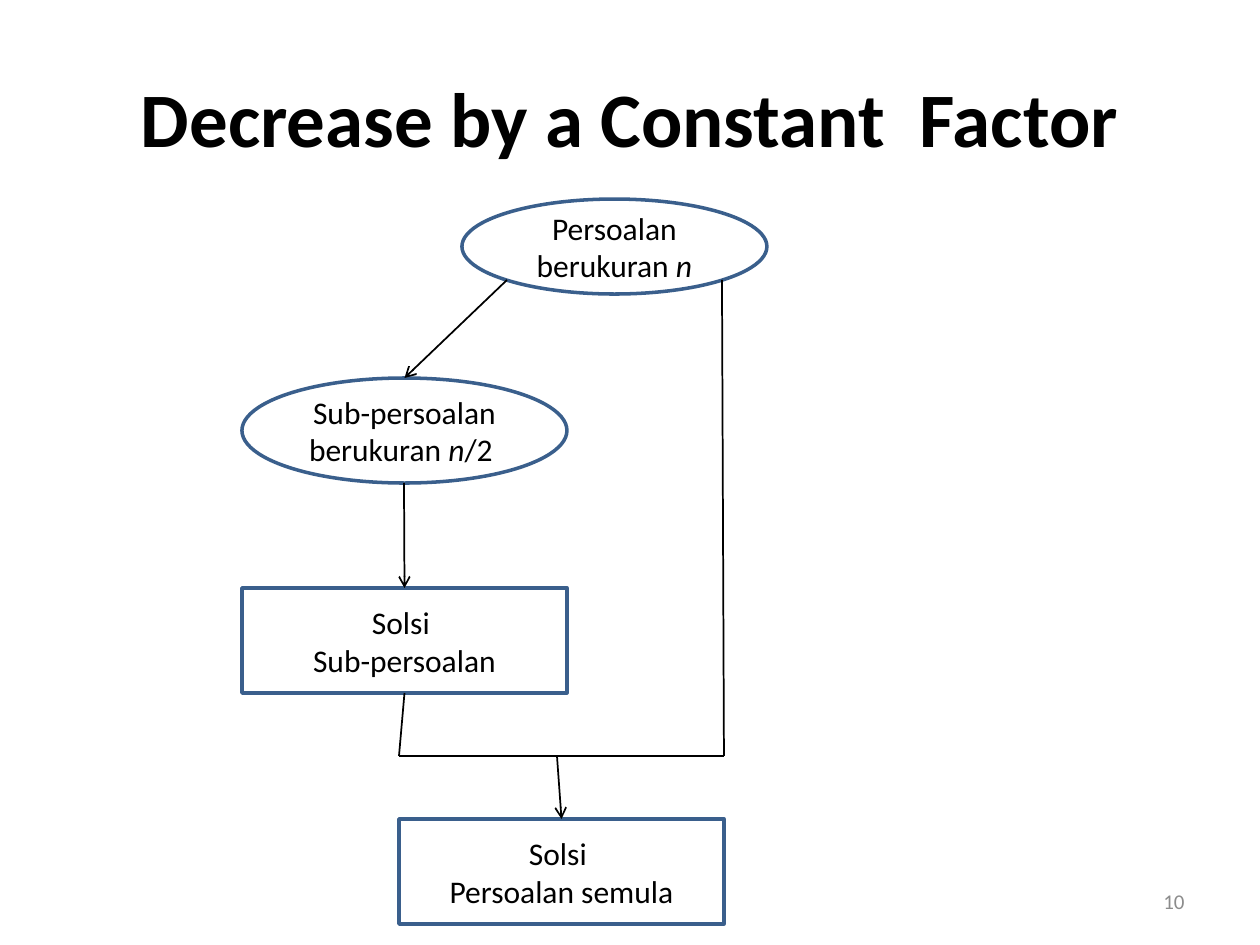
"""Builds the decrease-by-a-constant-factor flow slide."""
from lxml import etree
from pptx import Presentation
from pptx.dml.color import RGBColor
from pptx.enum.shapes import MSO_CONNECTOR, MSO_SHAPE
from pptx.enum.text import MSO_ANCHOR, PP_ALIGN
from pptx.oxml.ns import qn
from pptx.util import Emu, Pt

OVAL, RECTANGLE = MSO_SHAPE.OVAL, MSO_SHAPE.RECTANGLE
STRAIGHT = MSO_CONNECTOR.STRAIGHT
MIDDLE = MSO_ANCHOR.MIDDLE
CENTER, RIGHT = PP_ALIGN.CENTER, PP_ALIGN.RIGHT
TITLE_ONLY = 5
TOP, BOTTOM = 0, 2


def px(length):
    """Turn pixels into EMU."""
    return Emu(round(length * 914400 / 126))


def color(value):
    """Turn a hex string into a colour."""
    return RGBColor.from_string(value)


def write(frame, paragraphs, size=18, ink="000000", bold=False, align=CENTER, font="Calibri"):
    """Fill a text frame with paragraphs, each a list of (text, italic) spans."""
    frame.word_wrap = True
    frame.vertical_anchor = MIDDLE
    for index, spans in enumerate(paragraphs):
        para = frame.add_paragraph() if index else frame.paragraphs[0]
        para.alignment = align
        for text, italic in spans:
            span = para.add_run()
            span.text = text
            span.font.name = font
            span.font.size = Pt(size)
            span.font.bold = bold
            span.font.italic = italic
            span.font.color.rgb = color(ink)


class FlowSlide:
    """Holds the style and the current slide."""

    outline, ink, muted = "3A5F8C", "000000", "8C8C8C"

    def __init__(self, deck):
        """Add a title-only slide."""
        self.slide = deck.slides.add_slide(deck.slide_layouts[TITLE_ONLY])

    def title(self, text, left, top, width, height):
        """Place and format the title."""
        box = self.slide.shapes.title
        box.left, box.top, box.width, box.height = map(px, (left, top, width, height))
        write(box.text_frame, [[(text, False)]], size=44, bold=True)

    def node(self, kind, paragraphs, left, top, width=325, height=105):
        """Add an outlined shape with centred text."""
        shape = self.slide.shapes.add_shape(kind, *map(px, (left, top, width, height)))
        shape.shadow.inherit = False
        shape.fill.background()
        shape.line.color.rgb = color(self.outline)
        shape.line.width = Pt(2)
        write(shape.text_frame, paragraphs)
        return shape

    def line(self, start, end, source=None, target=None, arrow=False):
        """Add a line, joined to the bottom of source and the top of target."""
        connector = self.slide.shapes.add_connector(STRAIGHT, *map(px, start + end))
        if source:
            connector.begin_connect(source, BOTTOM)
        if target:
            connector.end_connect(target, TOP)
        connector.line.color.rgb = color(self.ink)
        connector.line.width = Pt(1)
        if arrow:
            etree.SubElement(connector.line._get_or_add_ln(), qn("a:tailEnd"), type="arrow")
        etree.SubElement(connector._element.spPr, qn("a:effectLst"))

    def page_number(self, text, left, top, width, height):
        """Add the page number."""
        box = self.slide.shapes.add_textbox(*map(px, (left, top, width, height)))
        write(box.text_frame, [[(text, False)]], size=12, ink=self.muted, align=RIGHT)


def main():
    """Build and save the deck."""
    deck = Presentation()
    deck.slide_width, deck.slide_height = px(1260), px(945)
    page = FlowSlide(deck)
    page.title("Decrease by a Constant  Factor", 63, 38, 1134, 157)

    page.node(OVAL, [[("Persoalan berukuran ", False), ("n", True)]], 462, 199, 305, 95)
    subproblem = page.node(
        OVAL, [[("Sub-persoalan berukuran ", False), ("n", True), ("/2 ", False)]], 242, 378)
    partial, final = [
        page.node(RECTANGLE, [[("Solsi ", False)], [(name, False)]], left, top)
        for name, left, top in (("Sub-persoalan", 242, 588), ("Persoalan semula", 399, 819))]

    page.line((507, 280), (404, 378), target=subproblem, arrow=True)
    page.line((404, 483), (404, 588), target=partial, arrow=True)
    page.line((404, 693), (399, 756), source=partial)
    page.line((399, 756), (724, 756))
    page.line((724, 756), (722, 280))
    page.line((557, 756), (562, 819), target=final, arrow=True)

    page.page_number("10", 903, 876, 294, 50)
    deck.save("out.pptx")


if __name__ == "__main__":
    main()
